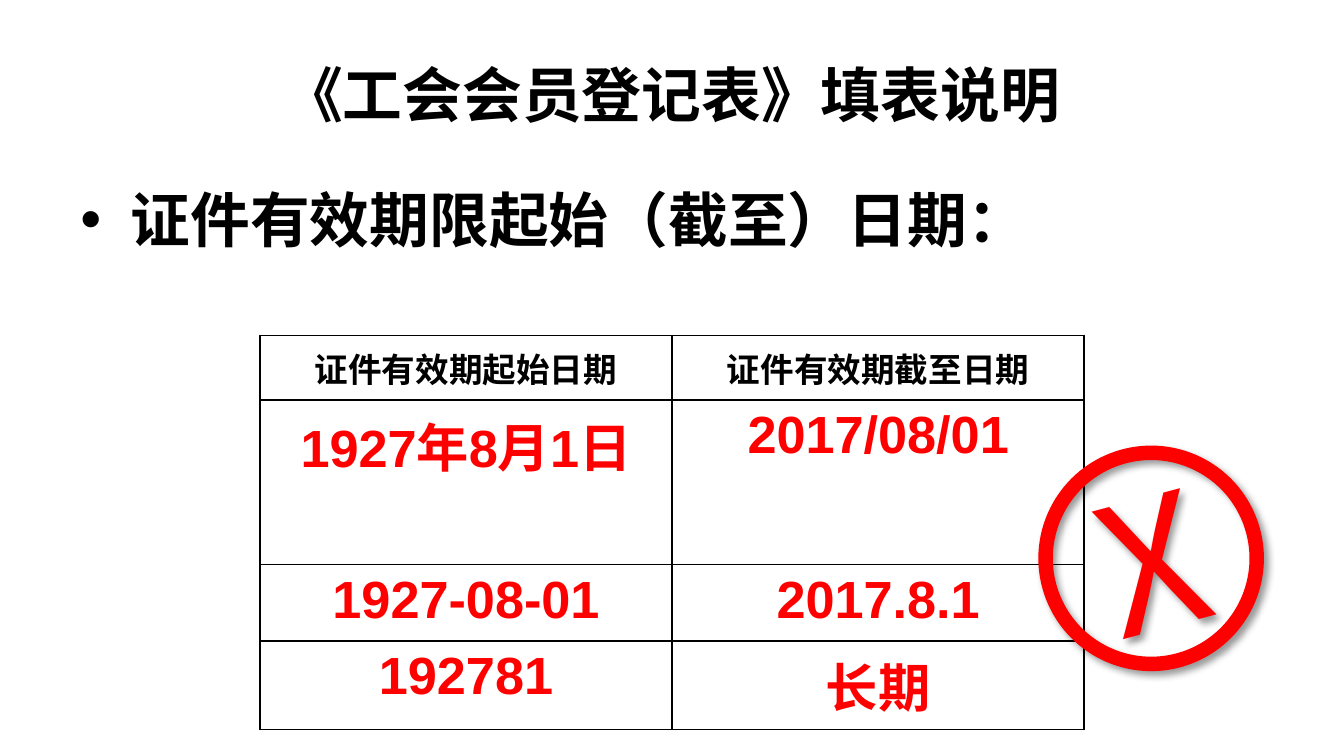
"""Build the slide on filling in certificate validity dates."""
import pptx
import pptx.dml.color
import pptx.enum.shapes
import pptx.enum.text
import pptx.oxml
import pptx.oxml.ns
import pptx.util
from pptx.util import Cm

BLACK = pptx.dml.color.RGBColor(0, 0, 0)
RED = pptx.dml.color.RGBColor(255, 0, 0)
LATIN = "Arial"
CHINESE = "Noto Sans CJK SC"
CENTER = pptx.enum.text.PP_ALIGN.CENTER
LEFT = pptx.enum.text.PP_ALIGN.LEFT
MIDDLE = pptx.enum.text.MSO_ANCHOR.MIDDLE
NAMESPACE = pptx.oxml.ns.nsdecls("a")


def element(tag, attributes="", content=""):
    return pptx.oxml.parse_xml(f"<a:{tag} {NAMESPACE} {attributes}>{content}</a:{tag}>")


def write(frame, text, size, color, font=LATIN, bold=True, align=CENTER):
    frame.text = text
    para = frame.paragraphs[0]
    para.alignment = align
    span = para.runs[0]
    span.font.size = pptx.util.Pt(size)
    span.font.bold = bold
    span.font.color.rgb = color
    span.font.name = font
    span.font._element.find(pptx.oxml.ns.qn("a:latin")).addnext(
        element("ea", f'typeface="{CHINESE}"'))
    return para


deck = pptx.Presentation()
deck.slide_width, deck.slide_height = Cm(25.4), Cm(14.29)
page = deck.slides.add_slide(deck.slide_layouts[6])

title_box = page.shapes.add_textbox(Cm(1.27), Cm(0.58), Cm(22.86), Cm(2.39))
title_box.text_frame.word_wrap = True
title_box.text_frame.vertical_anchor = MIDDLE
write(title_box.text_frame, "《工会会员登记表》填表说明", 32, BLACK)

topic_box = page.shapes.add_textbox(Cm(1.27), Cm(3.33), Cm(18.03), Cm(1.47))
topic_box.text_frame.word_wrap = True
topic = write(topic_box.text_frame, "证件有效期限起始（截至）日期：", 32, BLACK, align=LEFT)
topic_format = topic._p.get_or_add_pPr()
topic_format.set("marL", str(Cm(0.95)))
topic_format.set("indent", str(Cm(-0.95)))
topic_format.append(element("buFont", 'typeface="Arial"'))
topic_format.append(element("buChar", 'char="•"'))

DATES = [
    ("证件有效期起始日期", "证件有效期截至日期"),
    ("1927年8月1日", "2017/08/01"),
    ("1927-08-01", "2017.8.1"),
    ("192781", "长期"),
]
ROW_HEIGHTS = [1.22, 3.11, 1.44, 1.68]
table = page.shapes.add_table(
    len(DATES), 2, Cm(4.91), Cm(6.34), Cm(15.58), Cm(sum(ROW_HEIGHTS))).table
table.first_row = table.horz_banding = False
for row_index, (dates, height) in enumerate(zip(DATES, ROW_HEIGHTS)):
    table.rows[row_index].height = Cm(height)
    for column_index, date in enumerate(dates):
        cell = table.cell(row_index, column_index)
        cell.fill.background()
        if row_index == 0:
            cell.vertical_anchor = MIDDLE
            cell.margin_left = cell.margin_right = cell.margin_top = cell.margin_bottom = 0
            write(cell.text_frame, date, 18, BLACK, CHINESE)
        else:
            write(cell.text_frame, date, 28, RED)
        cell_format = cell._tc.get_or_add_tcPr()
        for position, side in enumerate(("lnL", "lnR", "lnT", "lnB")):
            cell_format.insert(position, element(
                side, 'w="12700"',
                f'<a:solidFill><a:srgbClr val="{BLACK}"/></a:solidFill>'))

wrong_mark = page.shapes.add_shape(
    pptx.enum.shapes.MSO_SHAPE.OVAL, Cm(19.76), Cm(8.56), Cm(3.99), Cm(3.99))
wrong_mark.rotation = 345
wrong_mark.fill.background()
wrong_mark.line.color.rgb = RED
wrong_mark.line.width = pptx.util.Pt(7.75)
wrong_mark.shadow.inherit = False
wrong_mark._element.spPr.find(pptx.oxml.ns.qn("a:effectLst")).append(element(
    "outerShdw",
    'blurRad="50800" dist="38100" dir="2700000" algn="tl" rotWithShape="0"',
    f'<a:srgbClr val="{BLACK}"><a:alpha val="40000"/></a:srgbClr>'))
wrong_mark.text_frame.vertical_anchor = MIDDLE
write(wrong_mark.text_frame, "X", 96, RED, CHINESE, bold=False)

deck.save("out.pptx")
